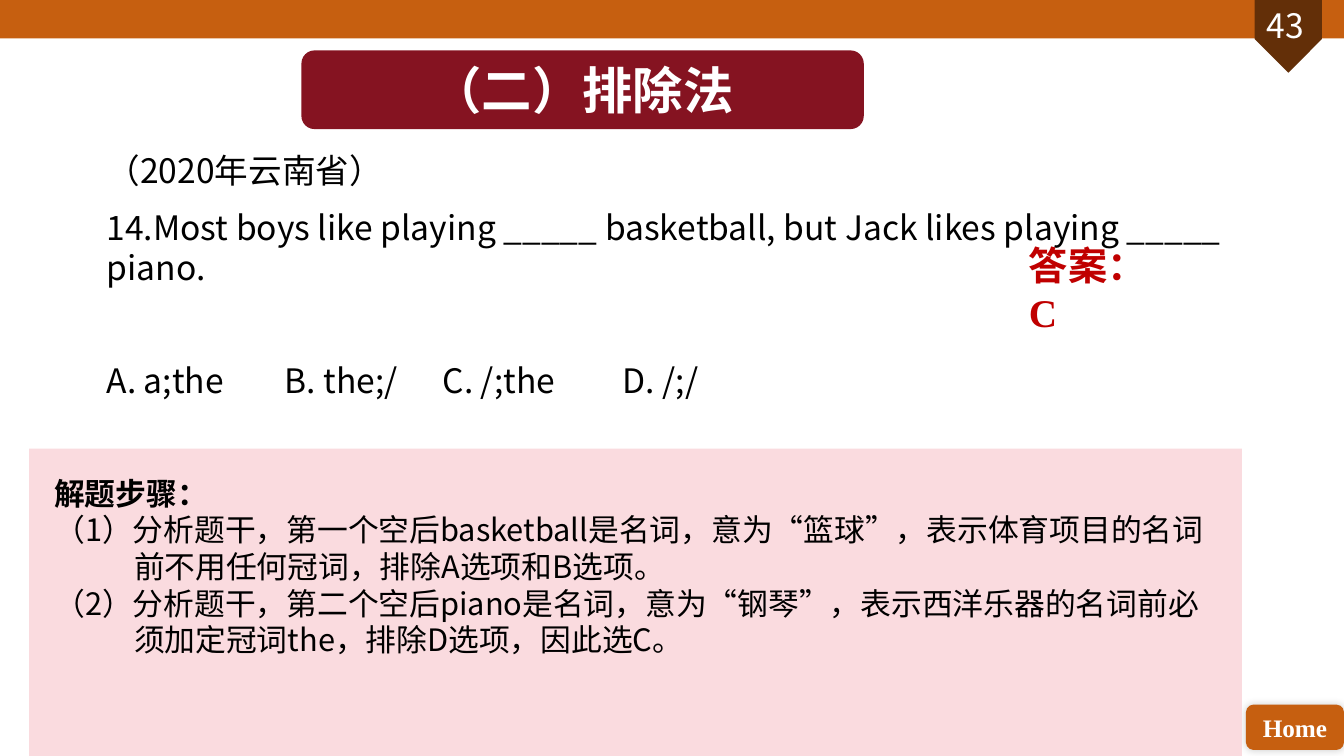
from dataclasses import dataclass

from lxml.etree import SubElement
from pptx import Presentation
from pptx.dml.color import RGBColor
from pptx.enum.shapes import MSO_SHAPE
from pptx.enum.text import MSO_ANCHOR, PP_ALIGN
from pptx.oxml.ns import qn
from pptx.util import Pt


@dataclass(frozen=True)
class Theme:
    orange: str = "C65F10"
    brown: str = "632F08"
    crimson: str = "851321"
    pink: str = "FADBDF"
    red: str = "C00000"
    white: str = "FFFFFF"
    black: str = "000000"
    sans: str = "Noto Sans CJK SC"
    serif: str = "Times New Roman"
    heading: str = "Calibri"
    title: int = 36
    answer: int = 28
    body: int = 24
    steps: int = 22
    button: int = 18
    leading: float = 1.19  # line height as a multiple of the type size


THEME = Theme()


def add_box(page, kind, box, color):
    """Plain filled shape; box is left, top, width, height in points."""
    shape = page.shapes.add_shape(kind, *map(Pt, box))
    shape.shadow.inherit = False
    shape.fill.solid()
    shape.fill.fore_color.rgb = RGBColor.from_string(color)
    shape.line.fill.background()
    return shape


def add_frame(page, box):
    frame = page.shapes.add_textbox(*map(Pt, box)).text_frame
    frame.word_wrap = True
    return frame


def write(frame, text, size=THEME.body, font=THEME.sans, color=THEME.black,
          bold=False, align=PP_ALIGN.LEFT, spacing=1.0, before=0, after=0,
          hanging=0, tabs=()):
    """Write one paragraph, filling the first one while it is empty."""
    first = frame.paragraphs[0]
    para = frame.add_paragraph() if first.runs else first
    para.alignment = align
    para.line_spacing = spacing
    para.space_before, para.space_after = Pt(before), Pt(after)
    properties = para._p.get_or_add_pPr()
    if hanging:
        properties.set("marL", str(Pt(hanging)))
        properties.set("indent", str(Pt(-hanging)))
    if tabs:
        stops = SubElement(properties, qn("a:tabLst"))
        for position in tabs:
            SubElement(stops, qn("a:tab"), pos=str(Pt(position)), algn="l")
    span = para.add_run()
    span.text = text
    span.font.size, span.font.name, span.font.bold = Pt(size), font, bold
    span.font.color.rgb = RGBColor.from_string(color)
    SubElement(span._r.get_or_add_rPr(), qn("a:ea"), typeface=THEME.sans)


def add_header(page, box, number):
    left, top, width, height = box
    add_box(page, MSO_SHAPE.RECTANGLE, box, THEME.orange)
    # Page marker pointing down
    marker = add_box(page, MSO_SHAPE.PENTAGON,
                     (left + width - 65.8, top + 2, 52, 48), THEME.brown)
    marker.rotation = 90
    frame = add_frame(page, (left + width - 77, top, 70, 36))
    write(frame, number, color=THEME.white, align=PP_ALIGN.CENTER,
          spacing=Pt(THEME.body * THEME.leading))


def add_home_button(page, box):
    button = add_box(page, MSO_SHAPE.ROUNDED_RECTANGLE, box, THEME.orange)
    # Soft shadow
    effects = button._element.spPr.find(qn("a:effectLst"))
    shadow = SubElement(effects, qn("a:outerShdw"), blurRad=str(Pt(6)),
                        dist="0", dir="18900000")
    shade = SubElement(shadow, qn("a:srgbClr"), val=THEME.black)
    SubElement(shade, qn("a:alpha"), val="20000")
    frame = button.text_frame
    frame.vertical_anchor = MSO_ANCHOR.MIDDLE
    write(frame, "Home", size=THEME.button, font=THEME.serif,
          color=THEME.white, bold=True, align=PP_ALIGN.CENTER)


def add_title(page, box, text):
    banner = add_box(page, MSO_SHAPE.ROUNDED_RECTANGLE, box, THEME.crimson)
    title = page.shapes.title
    title.left, title.top, title.width, title.height = map(Pt, box)
    banner._element.addnext(title._element)  # bring the title to the front
    title.text_frame.vertical_anchor = MSO_ANCHOR.MIDDLE
    write(title.text_frame, text, size=THEME.title, font=THEME.heading,
          color=THEME.white, bold=True, align=PP_ALIGN.CENTER)


def add_question(page, box, source, question, options, answer):
    left, top, width, height = box
    leading = THEME.body * THEME.leading
    frame = add_frame(page, box)
    for text in (source, question):
        write(frame, text, spacing=Pt(leading), after=12)
    # Options stand one free line below the question
    write(frame, "\t".join(options), spacing=Pt(leading),
          before=leading + 12, tabs=(127, 240, 368.5))
    # Answer beside the question
    frame = add_frame(page, (left + 658.8, top + 64.8, 112, 82))
    write(frame, answer, size=THEME.answer, font=THEME.serif,
          color=THEME.red, bold=True)


def add_steps(page, box, heading, steps):
    left, top, width, height = box
    add_box(page, MSO_SHAPE.RECTANGLE, box, THEME.pink)
    frame = add_frame(page, (left + 10.8, top + 15.1, width - 23.8, 173.5))
    for text in (heading, *steps):
        write(frame, text, size=THEME.steps, bold=text == heading,
              spacing=Pt(THEME.steps * THEME.leading), hanging=57)


def main():
    deck = Presentation()
    deck.slide_width, deck.slide_height = Pt(960), Pt(540)
    page = deck.slides.add_slide(deck.slide_layouts[5])

    add_header(page, (0, 0, 960, 27.4), "43")
    add_home_button(page, (890, 503.3, 70, 32.4))
    add_title(page, (215.3, 36, 401.7, 56.2), "（二）排除法")
    add_question(
        page, (69.1, 103.7, 881.3, 201),
        "（2020年云南省）",
        "14.Most boys like playing _____ basketball, "
        "but Jack likes playing _____ piano.",
        ("A. a;the", "B. the;/", "C. /;the", "D. /;/"),
        "答案：C",
    )
    add_steps(
        page, (20.9, 320.4, 866.2, 219.6),
        "解题步骤：",
        ("（1）分析题干，第一个空后basketball是名词，意为“篮球”，"
         "表示体育项目的名词前不用任何冠词，排除A选项和B选项。",
         "（2）分析题干，第二个空后piano是名词，意为“钢琴”，"
         "表示西洋乐器的名词前必须加定冠词the，排除D选项，因此选C。"),
    )
    deck.save("out.pptx")


if __name__ == "__main__":
    main()
